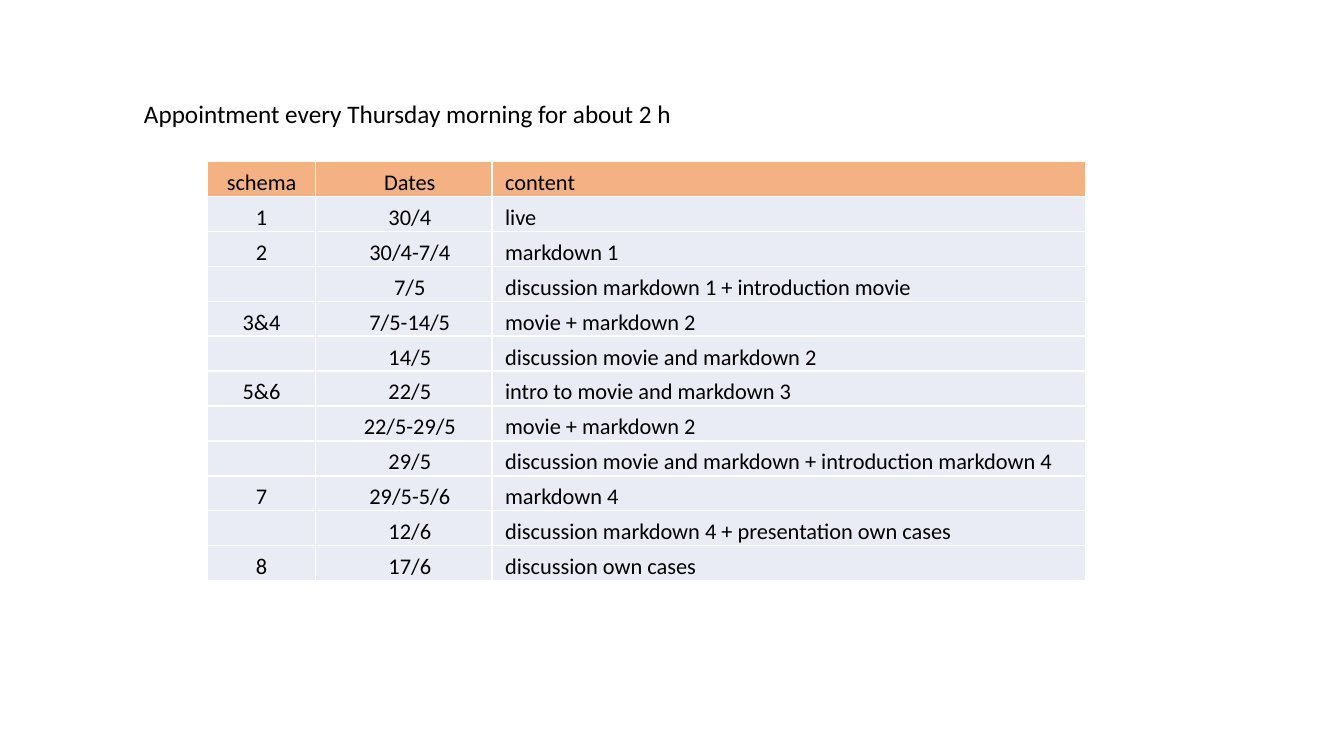
"""Build a slide with the weekly appointment schedule."""
import lxml.etree
import pptx
import pptx.dml.color
import pptx.enum.text
import pptx.oxml.ns
import pptx.util

Inches = pptx.util.Inches
Pt = pptx.util.Pt
CENTER = pptx.enum.text.PP_ALIGN.CENTER
LEFT = pptx.enum.text.PP_ALIGN.LEFT

COLORS = {"text": "000000", "header": "F4B183", "body": "E9EBF5", "border": "FFFFFF"}

SCHEDULE = [
    ("schema", "Dates", "content"),
    ("1", "30/4", "live"),
    ("2", "30/4-7/4", "markdown 1"),
    ("", "7/5", "discussion markdown 1 + introduction movie"),
    ("3&4", "7/5-14/5", "movie + markdown 2"),
    ("", "14/5", "discussion movie and markdown 2"),
    ("5&6", "22/5", "intro to movie and markdown 3"),
    ("", "22/5-29/5", "movie + markdown 2"),
    ("", "29/5", "discussion movie and markdown + introduction markdown 4"),
    ("7", "29/5-5/6", "markdown 4"),
    ("", "12/6", "discussion markdown 4 + presentation own cases"),
    ("8", "17/6", "discussion own cases"),
]
COLUMNS = [(1.07, CENTER, 0), (1.75, CENTER, 0.12), (5.89, LEFT, 0.12)]
ROW_HEIGHT = 0.347


def write_text(frame, text, size=16, align=LEFT, indent=0, font="Calibri", color="text"):
    paragraph = frame.paragraphs[0]
    paragraph.alignment = align
    if indent:
        paragraph._p.get_or_add_pPr().set("marL", str(Inches(indent)))
    if text:
        run = paragraph.add_run()
        run.text = text
        run.font.size = Pt(size)
        run.font.name = font
        run.font.color.rgb = pptx.dml.color.RGBColor.from_string(COLORS[color])


class ScheduleSlide:
    def __init__(self, presentation, colors):
        self.colors = colors
        self.slide = presentation.slides.add_slide(presentation.slide_layouts[6])

    def heading(self, text, left, top, width, height):
        box = self.slide.shapes.add_textbox(
            Inches(left), Inches(top), Inches(width), Inches(height))
        box.text_frame.word_wrap = True
        box.text_frame.auto_size = pptx.enum.text.MSO_AUTO_SIZE.SHAPE_TO_FIT_TEXT
        write_text(box.text_frame, text, size=18)

    def border(self, cell):
        qn = pptx.oxml.ns.qn
        properties = cell._tc.get_or_add_tcPr()
        for position, side in enumerate(("a:lnL", "a:lnR", "a:lnT", "a:lnB")):
            line = lxml.etree.Element(qn(side), w=str(Pt(1)))
            fill = lxml.etree.SubElement(line, qn("a:solidFill"))
            lxml.etree.SubElement(fill, qn("a:srgbClr"), val=self.colors["border"])
            properties.insert(position, line)

    def schedule(self, rows, columns, left, top):
        width = sum(column[0] for column in columns)
        table = self.slide.shapes.add_table(
            len(rows), len(columns), Inches(left), Inches(top),
            Inches(width), Inches(ROW_HEIGHT * len(rows))).table
        table.first_row = False
        table.horz_banding = False
        for column, (column_width, _, _) in zip(table.columns, columns):
            column.width = Inches(column_width)
        for row_index, entries in enumerate(rows):
            table.rows[row_index].height = Inches(ROW_HEIGHT)
            fill_name = "body" if row_index else "header"
            for column_index, entry in enumerate(entries):
                _, align, indent = columns[column_index]
                cell = table.cell(row_index, column_index)
                cell.margin_left = cell.margin_right = cell.margin_top = Inches(0.01)
                cell.margin_bottom = 0
                cell.vertical_anchor = pptx.enum.text.MSO_ANCHOR.BOTTOM
                cell.fill.solid()
                cell.fill.fore_color.rgb = pptx.dml.color.RGBColor.from_string(
                    self.colors[fill_name])
                self.border(cell)
                write_text(cell.text_frame, entry, align=align, indent=indent)


def main():
    presentation = pptx.Presentation()
    presentation.slide_width = Inches(13.33)
    presentation.slide_height = Inches(7.5)
    page = ScheduleSlide(presentation, COLORS)
    page.schedule(SCHEDULE, COLUMNS, 2.06, 1.6)
    page.heading("Appointment every Thursday morning for about 2 h", 1.33, 0.93, 6.94, 0.4)
    presentation.save("out.pptx")


if __name__ == "__main__":
    main()
